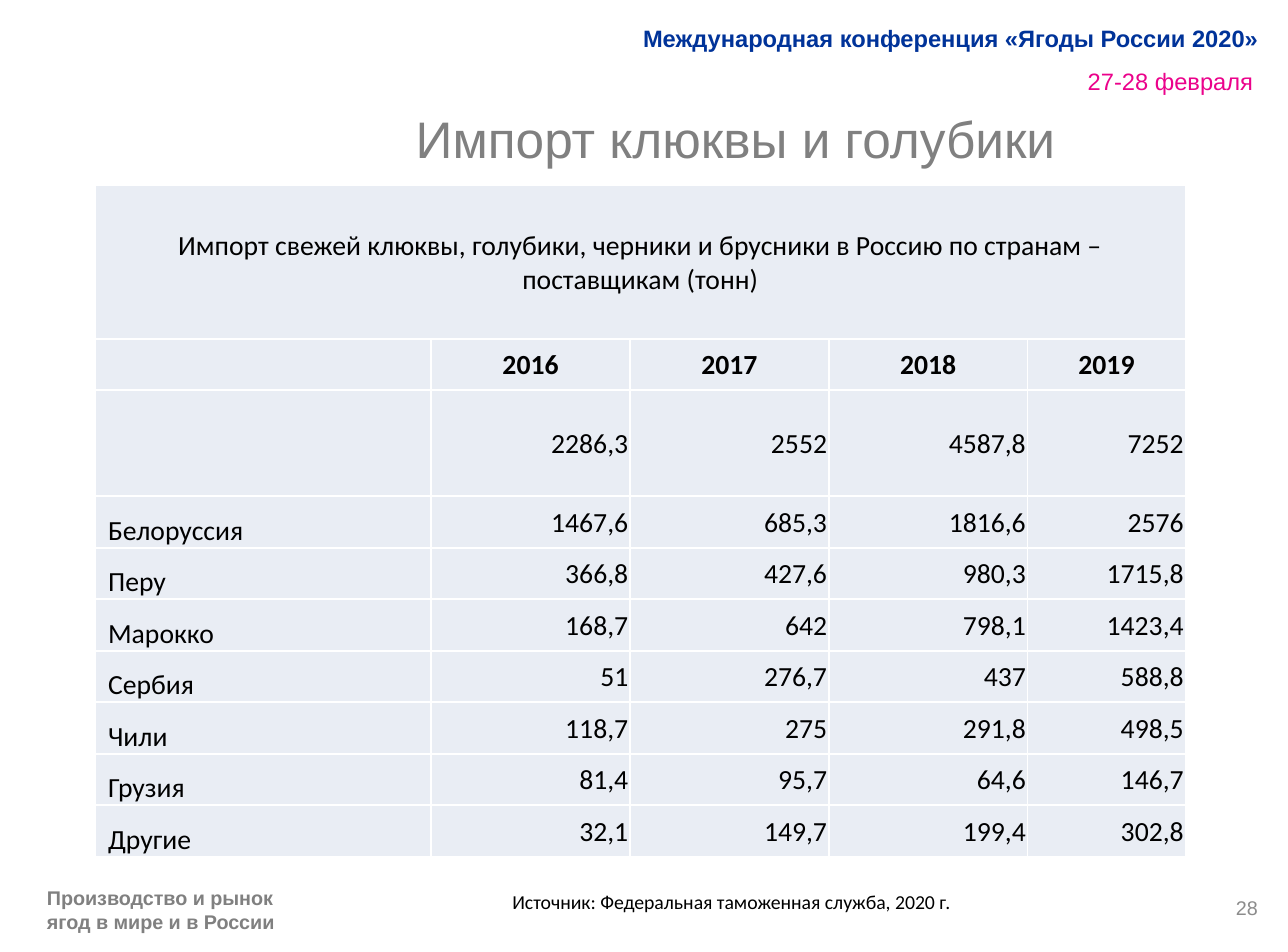
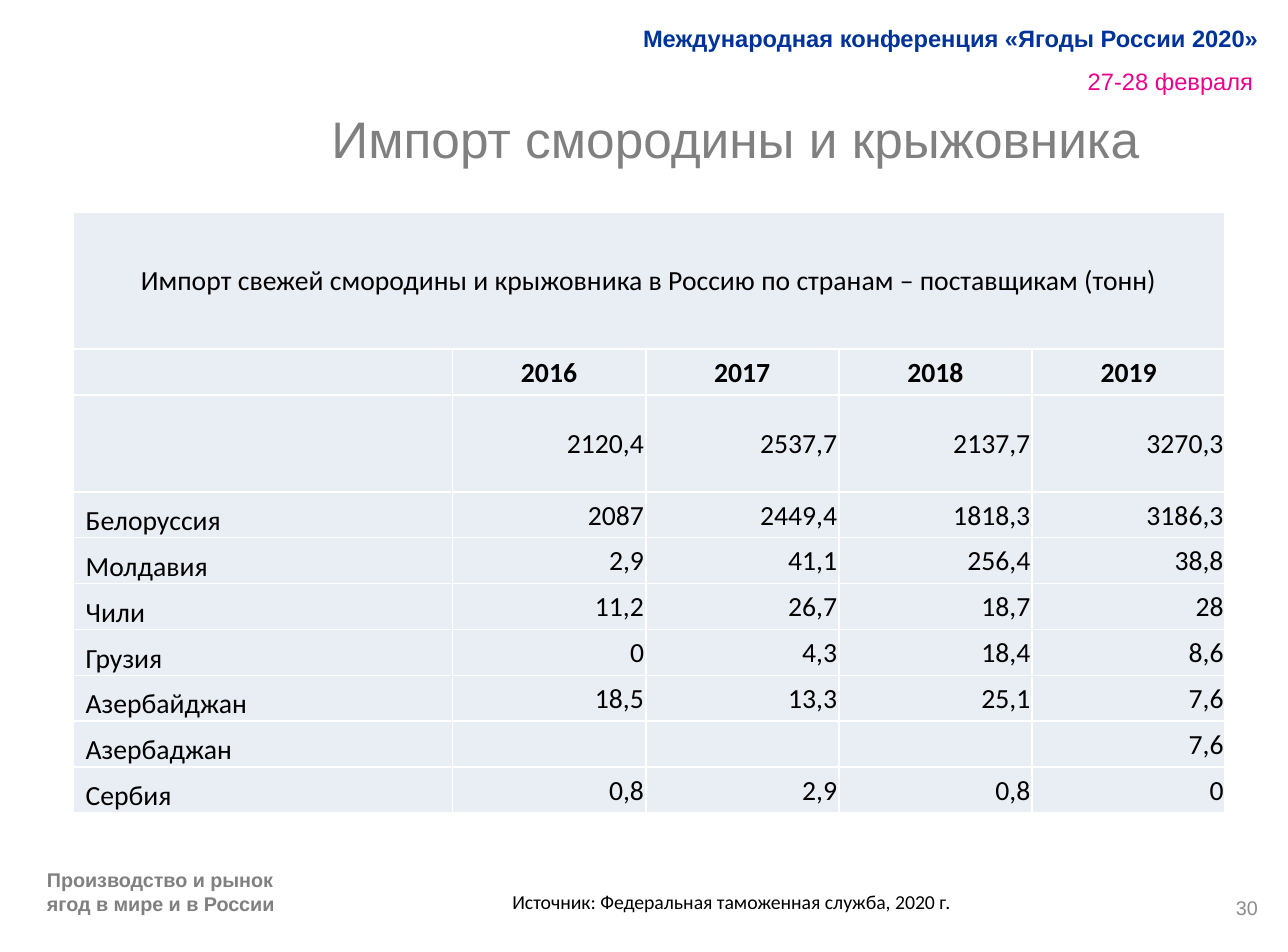
import pptx
import pptx.util
import pptx.dml.color
import pptx.enum.text

Cm, Pt = pptx.util.Cm, pptx.util.Pt
ALIGN = pptx.enum.text.PP_ALIGN
ANCHOR = pptx.enum.text.MSO_ANCHOR

COLORS = {
    "conference": "003399",
    "date": "EB028B",
    "title": "808080",
    "number": "8C8C8C",
    "text": "000000",
    "cell": "E9EDF4",
}
YEARS = ["2016", "2017", "2018", "2019"]
INSETS = {"margin_left": Cm(0.2), "margin_right": Cm(0.2),
          "margin_top": Cm(0.1), "margin_bottom": Cm(0.1)}
CELL_INSETS = {"margin_left": Cm(0.03), "margin_right": Cm(0.03),
               "margin_top": Cm(0.03), "margin_bottom": 0}

PAGES = [
    {
        "number": "28",
        "title": "Импорт клюквы и голубики",
        "caption": "Импорт свежей клюквы, голубики, черники и брусники "
                   "в Россию по странам – поставщикам (тонн)",
        "corner": (1.7, 3.31),
        "columns": [6, 3.55, 3.55, 3.55, 2.82],
        "heights": [2.74, 0.92, 1.89] + [0.92] * 7,
        "footer_box": (0.64, 15.76, 5.26, 0.97),
        "imports": [
            ["", "2286,3", "2552", "4587,8", "7252"],
            ["Белоруссия", "1467,6", "685,3", "1816,6", "2576"],
            ["Перу", "366,8", "427,6", "980,3", "1715,8"],
            ["Марокко", "168,7", "642", "798,1", "1423,4"],
            ["Сербия", "51", "276,7", "437", "588,8"],
            ["Чили", "118,7", "275", "291,8", "498,5"],
            ["Грузия", "81,4", "95,7", "64,6", "146,7"],
            ["Другие", "32,1", "149,7", "199,4", "302,8"],
        ],
    },
    {
        "number": "30",
        "title": "Импорт смородины и крыжовника",
        "caption": "Импорт свежей смородины и крыжовника в Россию "
                   "по странам – поставщикам (тонн)",
        "corner": (1.3, 3.79),
        "columns": [6.78] + [3.45] * 4,
        "heights": [2.44, 0.82, 1.73] + [0.82] * 7,
        "footer_box": (0.64, 15.11, 5.05, 1.63),
        "imports": [
            ["", "2120,4", "2537,7", "2137,7", "3270,3"],
            ["Белоруссия", "2087", "2449,4", "1818,3", "3186,3"],
            ["Молдавия", "2,9", "41,1", "256,4", "38,8"],
            ["Чили", "11,2", "26,7", "18,7", "28"],
            ["Грузия", "0", "4,3", "18,4", "8,6"],
            ["Азербайджан", "18,5", "13,3", "25,1", "7,6"],
            ["Азербаджан", "", "", "", "7,6"],
            ["Сербия", "0,8", "2,9", "0,8", "0"],
        ],
    },
]


def write(frame, text, color, size, font="Arial", bold=False, align=ALIGN.LEFT):
    """Fill a text frame with one formatted paragraph and return it."""
    paragraph = frame.paragraphs[0]
    paragraph.alignment = align
    run = paragraph.add_run()
    run.text = text
    for name, value in {"name": font, "size": Pt(size), "bold": bold}.items():
        setattr(run.font, name, value)
    run.font.color.rgb = pptx.dml.color.RGBColor.from_string(COLORS[color])
    return paragraph


def add_label(slide, box, anchor=ANCHOR.MIDDLE, insets=INSETS):
    """Add an empty wrapping text box and return its text frame."""
    frame = slide.shapes.add_textbox(*map(Cm, box)).text_frame
    for name, value in {**insets, "word_wrap": True, "vertical_anchor": anchor}.items():
        setattr(frame, name, value)
    return frame


deck = pptx.Presentation()
deck.slide_width, deck.slide_height = Cm(23), Cm(17)

for page in PAGES:
    slide = deck.slides.add_slide(deck.slide_layouts[5])

    date = write(add_label(slide, (18.49, 0.89, 4.09, 0.94), ANCHOR.TOP),
                 "27-28 февраля", "date", 12, align=ALIGN.RIGHT)
    date.line_spacing = Pt(20.4)
    write(add_label(slide, (10.74, 0.18, 11.94, 0.99)),
          "Международная конференция «Ягоды России 2020»",
          "conference", 12, bold=True, align=ALIGN.RIGHT)

    title = slide.shapes.title
    title.left, title.top, title.width, title.height = map(Cm, (3.71, 1.81, 18.87, 1.98))
    title_format = {**INSETS, "vertical_anchor": ANCHOR.TOP,
                    "auto_size": pptx.enum.text.MSO_AUTO_SIZE.NONE}
    for name, value in title_format.items():
        setattr(title.text_frame, name, value)
    write(title.text_frame, page["title"], "title", 26, align=ALIGN.CENTER)

    write(add_label(slide, (17.3, 15.76, 5.36, 0.91)),
          page["number"], "number", 10, align=ALIGN.RIGHT)

    rows = [[page["caption"], "", "", "", ""], ["", *YEARS], *page["imports"]]
    table = slide.shapes.add_table(
        len(rows), len(page["columns"]), *map(Cm, page["corner"]),
        Cm(sum(page["columns"])), Cm(sum(page["heights"]))).table
    table.first_row = table.horz_banding = False
    for column, width in zip(table.columns, page["columns"]):
        column.width = Cm(width)
    for row, height in zip(table.rows, page["heights"]):
        row.height = Cm(height)
    table.cell(0, 0).merge(table.cell(0, len(YEARS)))

    for r, values in enumerate(rows):
        for c, value in enumerate(values):
            cell = table.cell(r, c)
            is_country = r > 1 and c == 0
            cell_format = {**CELL_INSETS, "vertical_anchor": ANCHOR.MIDDLE}
            if is_country:
                cell_format.update(margin_left=Cm(0.23), vertical_anchor=ANCHOR.BOTTOM)
            for name, setting in cell_format.items():
                setattr(cell, name, setting)
            cell.fill.solid()
            cell.fill.fore_color.rgb = pptx.dml.color.RGBColor.from_string(COLORS["cell"])
            if value:
                align = ALIGN.CENTER if r < 2 else ALIGN.LEFT if is_country else ALIGN.RIGHT
                write(cell.text_frame, value, "text", 14, "Calibri", r == 1, align)

    write(add_label(slide, (8.9, 15.76, 12.19, 0.69), ANCHOR.TOP, insets={}),
          "Источник: Федеральная таможенная служба, 2020 г.", "text", 10, "Calibri")
    write(add_label(slide, page["footer_box"]),
          "Производство и рынок ягод в мире и в России", "title", 10, bold=True)

deck.save("out.pptx")
